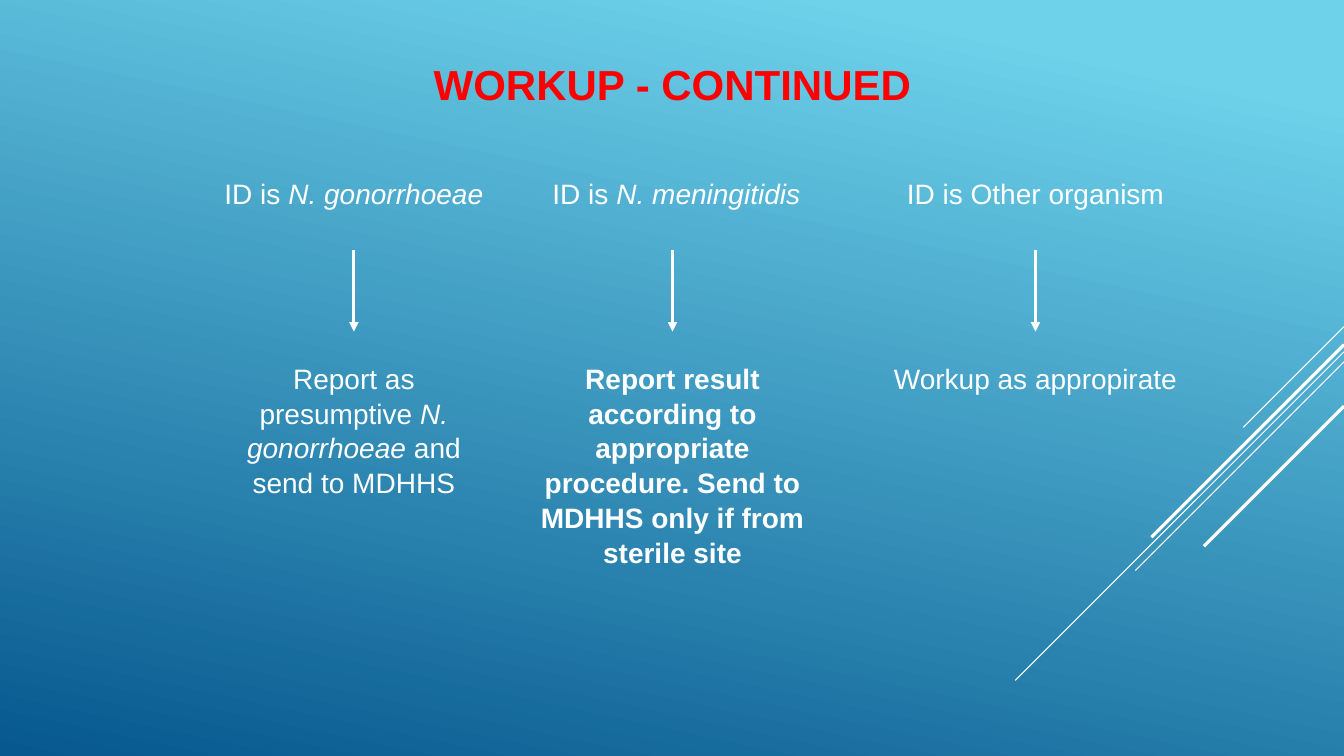
from dataclasses import dataclass

from lxml.etree import SubElement
from pptx import Presentation
from pptx.dml.color import RGBColor
from pptx.enum.shapes import MSO_CONNECTOR
from pptx.enum.text import MSO_ANCHOR, PP_ALIGN
from pptx.oxml.ns import qn
from pptx.util import Inches, Pt


@dataclass(frozen=True)
class Theme:
    """Colours, font and sizes of the slide."""
    sky: RGBColor = RGBColor.from_string("6ED2EB")
    deep: RGBColor = RGBColor.from_string("06588E")
    white: RGBColor = RGBColor.from_string("FFFFFF")
    red: RGBColor = RGBColor.from_string("FF0000")
    font: str = "Arial"
    title_size: float = 30
    body_size: float = 20
    thin: float = 0.75
    thick: float = 2.25


class SlideBuilder:
    """Draws styled elements on one slide."""

    def __init__(self, slide, theme):
        self.slide = slide
        self.theme = theme

    def background(self):
        fill = self.slide.background.fill
        fill.gradient()
        fill.gradient_angle = 258
        stops = ((0.1, self.theme.sky), (1, self.theme.deep))
        for stop, (position, color) in zip(fill.gradient_stops, stops):
            stop.position = position
            stop.color.rgb = color

    def line(self, start, end, width, arrow=False):
        points = [Inches(value) for value in (*start, *end)]
        connector = self.slide.shapes.add_connector(MSO_CONNECTOR.STRAIGHT, *points)
        connector.line.color.rgb = self.theme.white
        connector.line.width = Pt(width)
        properties = connector.line._get_or_add_ln()
        if arrow:
            SubElement(properties, qn("a:tailEnd"), type="triangle")
        SubElement(connector._element.spPr, qn("a:effectLst"))

    def text(self, center, top, width, height, content, size, color,
             bold=False, inset=0.1, spacing=1.04):
        """Add centred text, with italic parts between asterisks."""
        shape = self.slide.shapes.add_textbox(
            Inches(center - width / 2), Inches(top), Inches(width), Inches(height))
        frame = shape.text_frame
        frame.word_wrap = True
        frame.vertical_anchor = MSO_ANCHOR.TOP
        frame.margin_left = frame.margin_right = Inches(0.1)
        frame.margin_top = frame.margin_bottom = Inches(inset)
        paragraph = frame.paragraphs[0]
        paragraph.alignment = PP_ALIGN.CENTER
        paragraph.line_spacing = spacing
        for index, part in enumerate(content.split("*")):
            if part:
                run = paragraph.add_run()
                run.text = part
                run.font.name = self.theme.font
                run.font.size = Pt(size)
                run.font.bold = bold
                run.font.italic = index % 2 == 1
                run.font.color.rgb = color

    def branch(self, center, finding, action, action_width, bold):
        theme = self.theme
        self.text(center, 1.64, 2.98, 0.57, finding, theme.body_size, theme.white)
        self.line((center, 2.48), (center, 3.29), theme.thick, arrow=True)
        self.text(center, 3.47, action_width, 0.57, action,
                  theme.body_size, theme.white, bold)


def main():
    presentation = Presentation()
    presentation.slide_width = Inches(13.33)
    presentation.slide_height = Inches(7.5)
    slide = presentation.slides.add_slide(presentation.slide_layouts[6])
    theme = Theme()
    builder = SlideBuilder(slide, theme)
    builder.background()

    diagonals = ((3.24, 1, theme.thin), (3.49, 3.26, theme.thin), (3.59, 2.07, theme.thin),
                 (3.42, 1.91, theme.thick), (4.03, 1.39, theme.thick))
    for top, reach, width in diagonals:
        builder.line((13.33, top), (13.33 - reach, top + reach), width)

    builder.text(6.67, 0.53, 11.71, 0.96, "WORKUP - CONTINUED", theme.title_size,
                 theme.red, bold=True, inset=0.05, spacing=1)
    branches = (
        (3.51, "ID is *N. gonorrhoeae*",
         "Report as presumptive *N. gonorrhoeae *and send to MDHHS", 2.98, False),
        (6.67, " ID is *N. meningitidis*",
         "Report result according to appropriate procedure. "
         "Send to MDHHS only if from sterile site", 2.98, True),
        (10.27, "ID is Other organism", "Workup as appropirate", 3.54, False),
    )
    for branch in branches:
        builder.branch(*branch)
    presentation.save("out.pptx")


if __name__ == "__main__":
    main()
